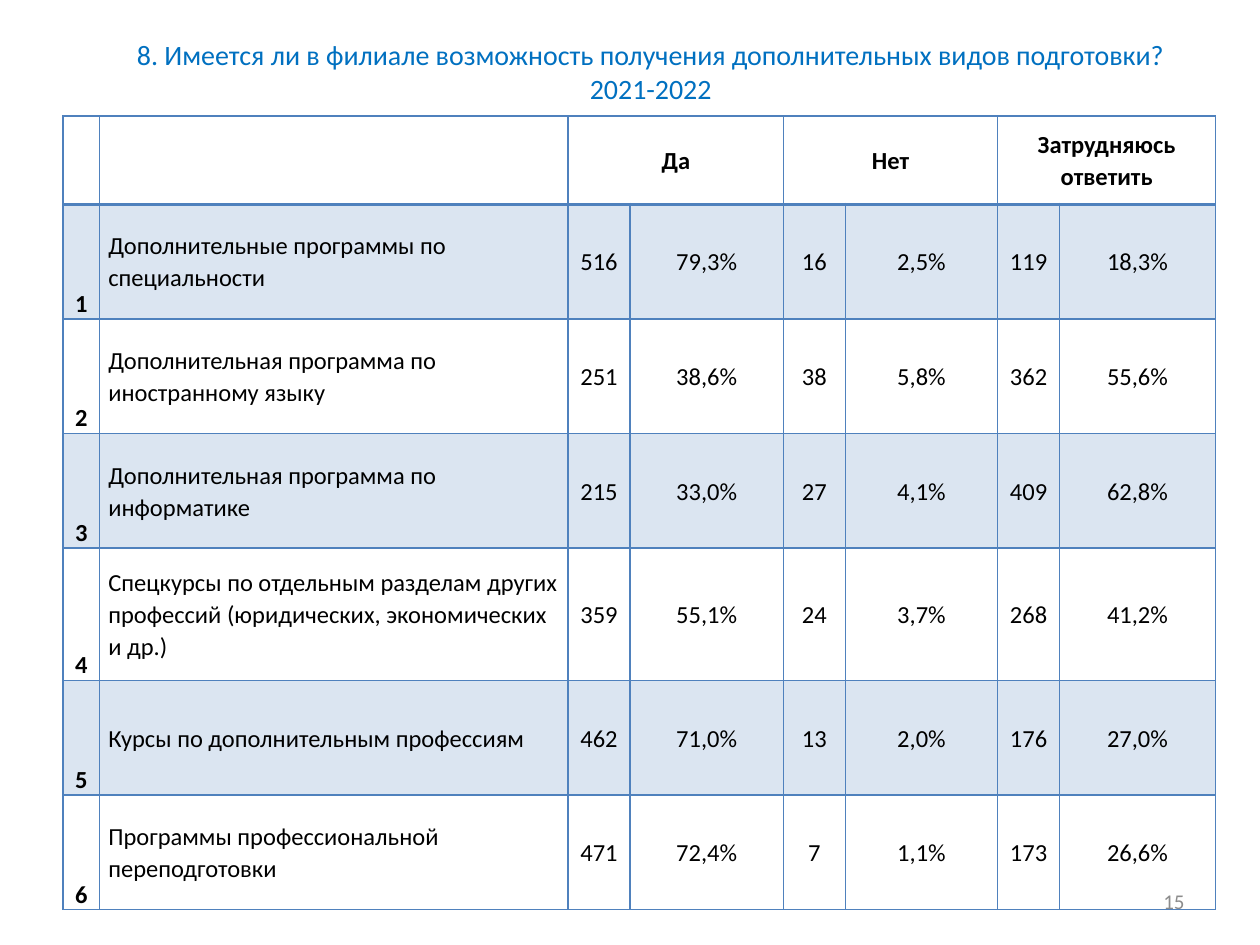
"""Build a survey slide with a table of answers about additional training."""
import pptx
import pptx.dml.color
import pptx.enum.text
import pptx.oxml
import pptx.oxml.ns
import pptx.util

Inches = pptx.util.Inches
Pt = pptx.util.Pt
RGBColor = pptx.dml.color.RGBColor
ALIGN = pptx.enum.text.PP_ALIGN
ANCHOR = pptx.enum.text.MSO_ANCHOR

TITLE = "8. Имеется ли в филиале возможность получения дополнительных видов подготовки?\v2021-2022"
SLIDE_NUMBER = "15"
ANSWERS = ["Да", "Нет", "Затрудняюсь ответить"]
PROGRAMS = [
    ("Дополнительные программы по специальности", "516", "79,3%", "16", "2,5%", "119", "18,3%"),
    ("Дополнительная программа по иностранному языку", "251", "38,6%", "38", "5,8%", "362", "55,6%"),
    ("Дополнительная программа по информатике", "215", "33,0%", "27", "4,1%", "409", "62,8%"),
    ("Спецкурсы по отдельным разделам других профессий (юридических, экономических и др.)",
     "359", "55,1%", "24", "3,7%", "268", "41,2%"),
    ("Курсы по дополнительным профессиям", "462", "71,0%", "13", "2,0%", "176", "27,0%"),
    ("Программы профессиональной переподготовки", "471", "72,4%", "7", "1,1%", "173", "26,6%"),
]
COLUMN_WIDTHS = [0.29, 3.72, 0.49, 1.22, 0.49, 1.21, 0.49, 1.24]
ROW_HEIGHTS = [0.7, 0.91, 0.91, 0.91, 1.05, 0.91, 0.91]

FONT = "Calibri"
BLACK = RGBColor(0x00, 0x00, 0x00)
GRAY = RGBColor(0x8C, 0x8C, 0x8C)
TITLE_BLUE = RGBColor(0x00, 0x70, 0xC0)
TABLE_BLUE = RGBColor(0x4F, 0x81, 0xBD)
BAND_ALPHA = 20000


def format_paragraph(paragraph, size, color, alignment, bold=False):
    paragraph.alignment = alignment
    paragraph.font.name = FONT
    paragraph.font.size = Pt(size)
    paragraph.font.bold = bold
    paragraph.font.color.rgb = color


def add_borders(cell, top, bottom):
    namespace = pptx.oxml.ns.nsdecls("a")
    properties = cell._tc.get_or_add_tcPr()
    for side, width in (("L", 1), ("R", 1), ("T", top), ("B", bottom)):
        properties.append(pptx.oxml.parse_xml(
            f'<a:ln{side} {namespace} w="{Pt(width)}"><a:solidFill>'
            f'<a:srgbClr val="{TABLE_BLUE}"/></a:solidFill></a:ln{side}>'))


def fill_cell(cell, banded):
    if not banded:
        cell.fill.background()
        return
    cell.fill.solid()
    cell.fill.fore_color.rgb = TABLE_BLUE
    color = cell._tc.tcPr.find(".//" + pptx.oxml.ns.qn("a:solidFill") + "[last()]")
    color = cell._tc.tcPr.findall(pptx.oxml.ns.qn("a:solidFill"))[0][0]
    alpha = color.makeelement(pptx.oxml.ns.qn("a:alpha"), {"val": str(BAND_ALPHA)})
    color.append(alpha)


def write_cell(cell, text, alignment, anchor, bold):
    cell.text = text
    cell.vertical_anchor = anchor
    cell.margin_left = cell.margin_right = Inches(0.07)
    cell.margin_top = cell.margin_bottom = 0
    paragraph = cell.text_frame.paragraphs[0]
    format_paragraph(paragraph, 14, BLACK, alignment, bold)
    paragraph.line_spacing = 1.07
    paragraph.space_after = Pt(8)


def add_title(slide):
    title = slide.shapes.title
    title.left, title.top, title.width, title.height = map(Inches, (0.5, 0.3, 9.33, 0.53))
    title.text_frame.text = TITLE
    title.text_frame.vertical_anchor = ANCHOR.MIDDLE
    format_paragraph(title.text_frame.paragraphs[0], 16, TITLE_BLUE, ALIGN.CENTER)


def add_slide_number(slide):
    box = slide.shapes.add_textbox(*map(Inches, (7.17, 6.95, 2.33, 0.4)))
    frame = box.text_frame
    frame.word_wrap = True
    frame.vertical_anchor = ANCHOR.MIDDLE
    frame.text = SLIDE_NUMBER
    format_paragraph(frame.paragraphs[0], 12, GRAY, ALIGN.RIGHT)


def add_answer_table(slide):
    frame = slide.shapes.add_table(
        len(ROW_HEIGHTS), len(COLUMN_WIDTHS), Inches(0.5), Inches(0.92),
        Inches(sum(COLUMN_WIDTHS)), Inches(sum(ROW_HEIGHTS)))
    table = frame.table
    table.first_row = table.horz_banding = False
    for column, width in zip(table.columns, COLUMN_WIDTHS):
        column.width = Inches(width)
    for index, (row, height) in enumerate(zip(table.rows, ROW_HEIGHTS)):
        row.height = Inches(height)
        for cell in row.cells:
            add_borders(cell, 2 if index == 1 else 1, 2 if index == 0 else 1)
            fill_cell(cell, index % 2 == 1)
    for index, answer in enumerate(ANSWERS):
        column = 2 + 2 * index
        table.cell(0, column).merge(table.cell(0, column + 1))
        write_cell(table.cell(0, column), answer, ALIGN.CENTER, ANCHOR.MIDDLE, True)
    for number, (program, *values) in enumerate(PROGRAMS, start=1):
        write_cell(table.cell(number, 0), str(number), ALIGN.CENTER, ANCHOR.BOTTOM, True)
        write_cell(table.cell(number, 1), program, ALIGN.LEFT, ANCHOR.MIDDLE, False)
        for column, value in enumerate(values, start=2):
            write_cell(table.cell(number, column), value, ALIGN.CENTER, ANCHOR.MIDDLE, False)


def main():
    presentation = pptx.Presentation()
    presentation.slide_width = Inches(10)
    presentation.slide_height = Inches(7.5)
    slide = presentation.slides.add_slide(presentation.slide_layouts[5])
    add_title(slide)
    add_slide_number(slide)
    add_answer_table(slide)
    presentation.save("out.pptx")


if __name__ == "__main__":
    main()
